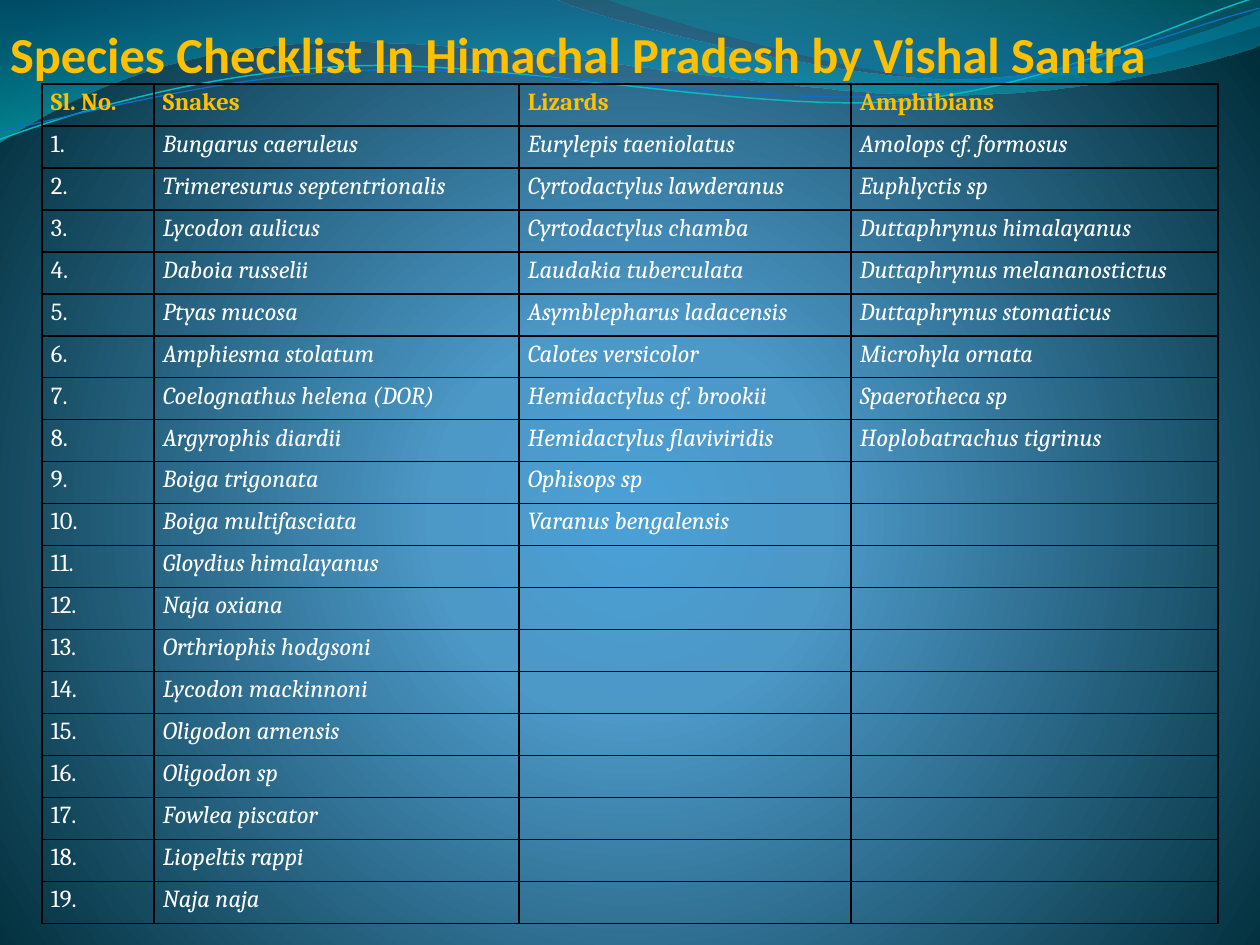
"""Build a species checklist slide: a table over a wavy blue background."""
import math
from itertools import zip_longest
from lxml import etree
from pptx import Presentation
from pptx import util as u
from pptx.dml.color import RGBColor
from pptx.enum import text
from pptx.oxml import parse_xml
from pptx.oxml.ns import nsdecls, qn

PX = 914400 / 126
COLORS = {
    "glow": "4AA0D6", "sky": "4C98C7", "deep": "002C38",
    "blue": "0074A1", "aqua": "00C6CF", "teal": "00A1A9", "azure": "008BBF",
    "cyan_line": "0AB8BF", "blue_line": "0F6FC6",
    "gold": "FFC000", "white": "FFFFFF", "black": "000000",
}


def set_gradient(fill, owner, stops, direction):
    fill.gradient()
    marks = "".join(
        f'<a:gs pos="{pos * 1000}"><a:srgbClr val="{COLORS[color]}">'
        f'<a:alpha val="{opacity * 1000}"/></a:srgbClr></a:gs>'
        for pos, color, opacity in stops)
    old = owner.find(".//" + qn("a:gradFill"))
    old.getparent().replace(old, parse_xml(
        f'<a:gradFill {nsdecls("a")} rotWithShape="1"><a:gsLst>{marks}</a:gsLst>{direction}</a:gradFill>'))


def draw_wave(slide, start, segments, closed):
    points = [point for segment in segments for point in zip(segment[::2], segment[1::2])]
    builder = slide.shapes.build_freeform(*start, scale=PX)
    builder.add_line_segments(points, close=closed)
    wave = builder.convert_to_shape()
    wave.shadow.inherit = False
    vertices = iter(list(wave.element.iter(qn("a:lnTo"))))
    for segment in segments:
        steps = [next(vertices) for _ in segment[::2]]
        if len(steps) == 3:
            curve = etree.Element(qn("a:cubicBezTo"))
            steps[0].addprevious(curve)
            for step in steps:
                curve.append(step[0])
                step.getparent().remove(step)
    return wave


deck = Presentation()
deck.slide_width, deck.slide_height = round(1260 * PX), round(945 * PX)
slide = deck.slides.add_slide(deck.slide_layouts[6])
set_gradient(
    slide.background.fill, slide.element,
    [(0, "glow", 100), (25, "sky", 100), (100, "deep", 100)],
    '<a:path path="circle"><a:fillToRect l="10000" t="110000" r="10000" b="100000"/></a:path>')

bands = [
    ((0, 0), [(554, -1), (600, 21, 837, 79, 955, 79), (1075, 79, 1207, 33, 1260, 11),
              (1261, 45), (1239, 55, 1096, 96, 940, 95), (784, 95, 481, 35, 324, 43),
              (163, 45, 58, 105, -1, 142), (0, 0)],
     [(0, "blue", 45), (100, "aqua", 55)]),
    ((604, -1), [(641, 14, 859, 78, 969, 82), (1079, 87, 1211, 40, 1260, 26), (1260, 0), (604, -1)],
     [(0, "teal", 30), (80, "azure", 45)]),
]
for start, segments, stops in bands:
    band = draw_wave(slide, start, segments, True)
    set_gradient(band.fill, band.element, stops, '<a:lin ang="5400000" scaled="0"/>')
    band.line.fill.background()

TILT = -2.7
cos, sin = math.cos(math.radians(TILT)), math.sin(math.radians(TILT))
ripples = [
    ((629, 72), [(0, 140), (60, 117, 199, 72, 349, 66), (498, 59, 747, 112, 898, 101),
                 (1050, 89, 1182, 19, 1257, -3)], "cyan_line", 0.85),
    ((629, 74), [(0, 131), (59, 121, 207, 77, 357, 71), (508, 64, 752, 106, 903, 95),
                 (1053, 84, 1186, 26, 1260, 8)], "blue_line", 0.75),
]
for (mid_x, mid_y), tilted, color, width in ripples:
    start, *segments = [
        [value for x, y in zip(segment[::2], segment[1::2])
         for value in (mid_x + (x - mid_x) * cos + (y - mid_y) * sin,
                       mid_y - (x - mid_x) * sin + (y - mid_y) * cos)]
        for segment in tilted]
    ripple = draw_wave(slide, start, segments, False)
    ripple.rotation = TILT
    ripple.fill.background()
    ripple.line.color.rgb = RGBColor.from_string(COLORS[color])
    ripple.line.width = u.Pt(width)

heading = slide.shapes.add_textbox(*(round(n * PX) for n in (10, -10, 1229, 94))).text_frame
heading_format = {"word_wrap": True, "vertical_anchor": text.MSO_ANCHOR.BOTTOM,
                  "margin_left": 0, "margin_top": 0, "margin_right": round(3 * PX), "margin_bottom": 0}
for key, value in heading_format.items():
    setattr(heading, key, value)
title = heading.paragraphs[0].add_run()
title.text = "Species Checklist In Himachal Pradesh by Vishal Santra"
for key, value in {"name": "Calibri", "size": u.Pt(28.8), "bold": True}.items():
    setattr(title.font, key, value)
title.font.color.rgb = RGBColor.from_string(COLORS["gold"])

snakes = [
    "Bungarus caeruleus", "Trimeresurus septentrionalis", "Lycodon aulicus", "Daboia russelii",
    "Ptyas mucosa", "Amphiesma stolatum", "Coelognathus helena (DOR)", "Argyrophis diardii",
    "Boiga trigonata", "Boiga multifasciata", "Gloydius himalayanus", "Naja oxiana",
    "Orthriophis hodgsoni", "Lycodon mackinnoni", "Oligodon arnensis", "Oligodon sp",
    "Fowlea piscator", "Liopeltis rappi", "Naja naja",
]
lizards = [
    "Eurylepis taeniolatus", "Cyrtodactylus lawderanus", "Cyrtodactylus chamba",
    "Laudakia tuberculata", "Asymblepharus ladacensis", "Calotes versicolor",
    "Hemidactylus cf. brookii", "Hemidactylus flaviviridis", "Ophisops sp", "Varanus bengalensis",
]
amphibians = [
    "Amolops cf. formosus", "Euphlyctis sp", "Duttaphrynus himalayanus",
    "Duttaphrynus melananostictus", "Duttaphrynus stomaticus", "Microhyla ornata",
    "Spaerotheca sp", "Hoplobatrachus tigrinus",
]
numbers = [f"{n}." for n in range(1, len(snakes) + 1)]
rows = [("Sl. No.", "Snakes", "Lizards", "Amphibians"),
        *zip_longest(numbers, snakes, lizards, amphibians, fillvalue="")]

widths = [112, 365, 332, 367]
row_height = 42
checklist = slide.shapes.add_table(
    len(rows), len(widths),
    *(round(n * PX) for n in (42, 84, sum(widths), row_height * len(rows)))).table
checklist.first_row = checklist.horz_banding = False
for column, width in zip(checklist.columns, widths):
    column.width = round(width * PX)

cell_format = {"margin_left": round(9 * PX), "margin_right": round(9 * PX),
               "margin_top": 0, "margin_bottom": 0}
paragraph_format = {"alignment": text.PP_ALIGN.JUSTIFY, "line_spacing": 1.15}
for r, row in enumerate(rows):
    checklist.rows[r].height = round(row_height * PX)
    for c, entry in enumerate(row):
        cell = checklist.cell(r, c)
        for key, value in cell_format.items():
            setattr(cell, key, value)
        borders = cell._tc.get_or_add_tcPr()
        for side in "LRTB":
            borders.append(parse_xml(
                f'<a:ln{side} {nsdecls("a")} w="12700"><a:solidFill>'
                f'<a:srgbClr val="{COLORS["black"]}"/></a:solidFill></a:ln{side}>'))
        cell.fill.background()
        paragraph = cell.text_frame.paragraphs[0]
        for key, value in paragraph_format.items():
            setattr(paragraph, key, value)
        if not entry:
            etree.SubElement(paragraph._p, qn("a:endParaRPr"), sz="1400")
            continue
        label = paragraph.add_run()
        label.text = entry
        font_format = {"name": "Cambria", "size": u.Pt(14), "bold": r == 0, "italic": r > 0 and c > 0}
        for key, value in font_format.items():
            setattr(label.font, key, value)
        label.font.color.rgb = RGBColor.from_string(COLORS["white" if r else "gold"])

deck.save("out.pptx")
